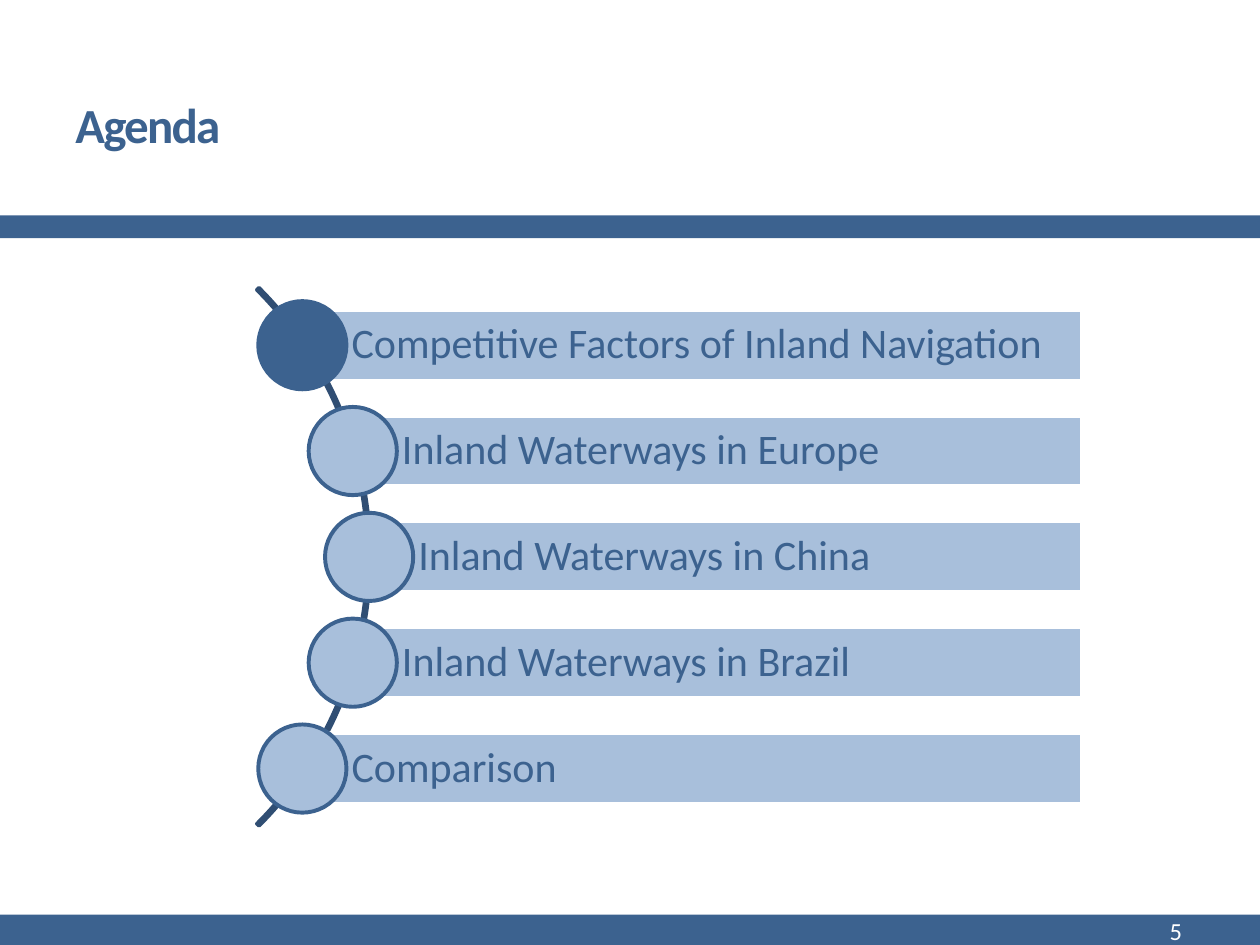
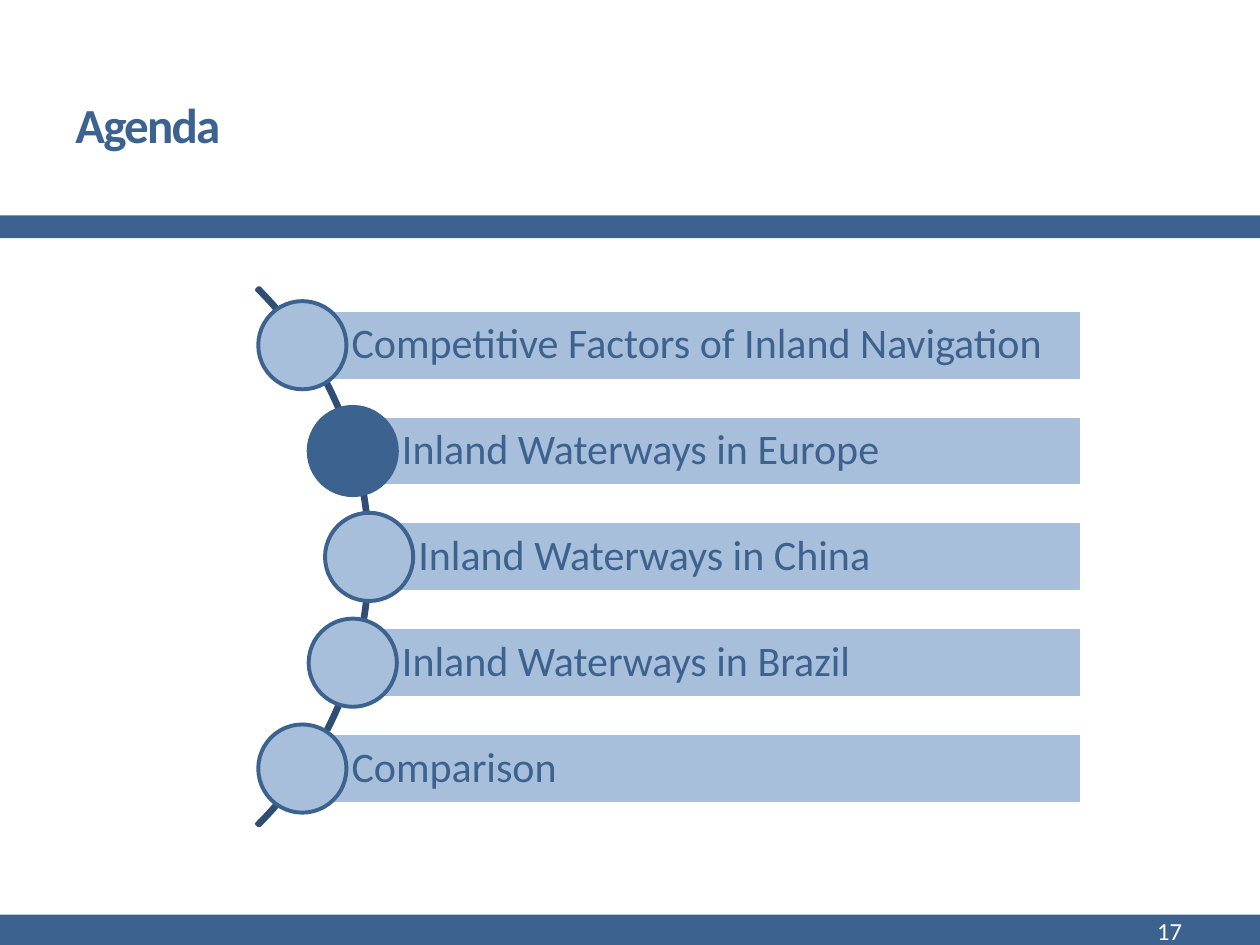
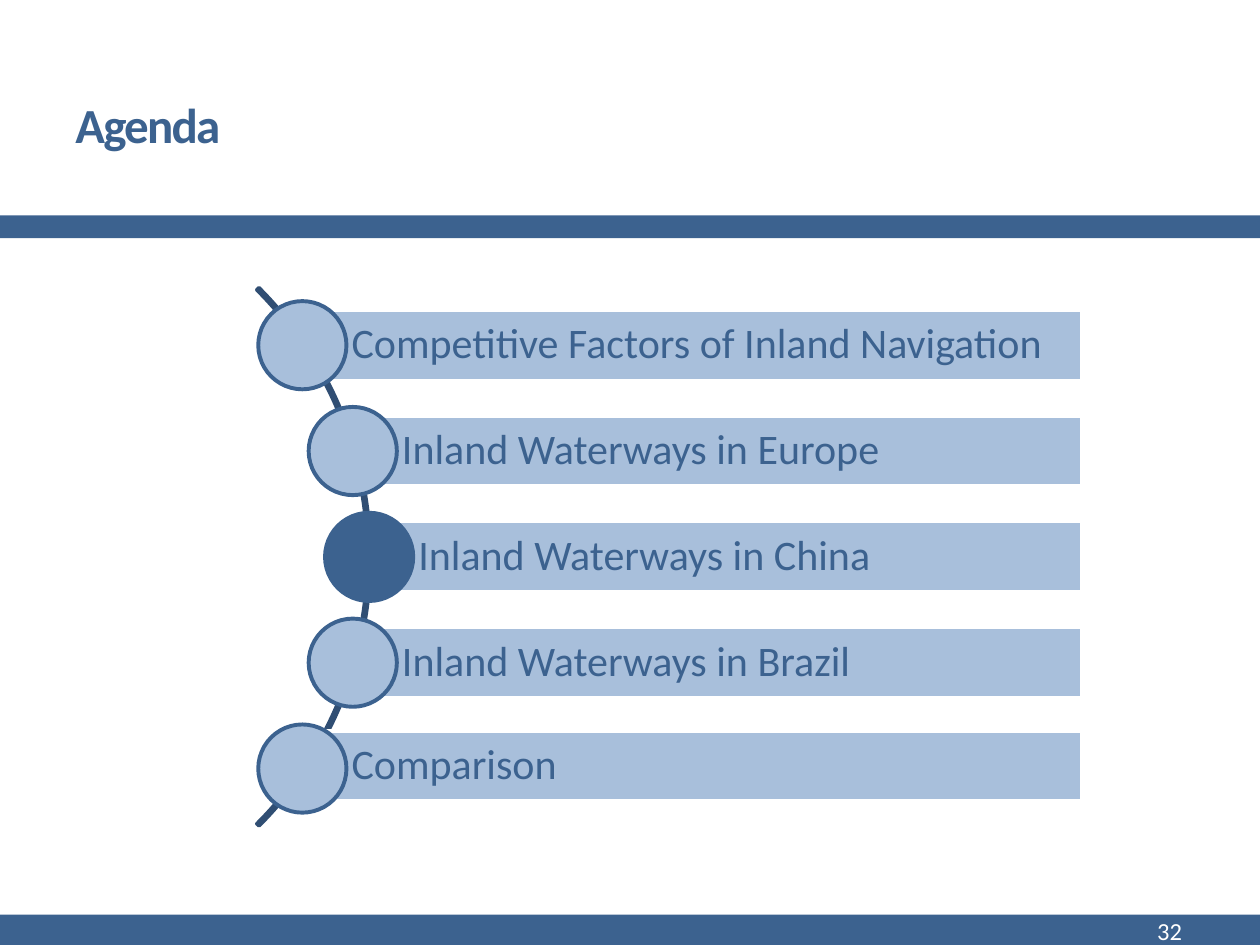
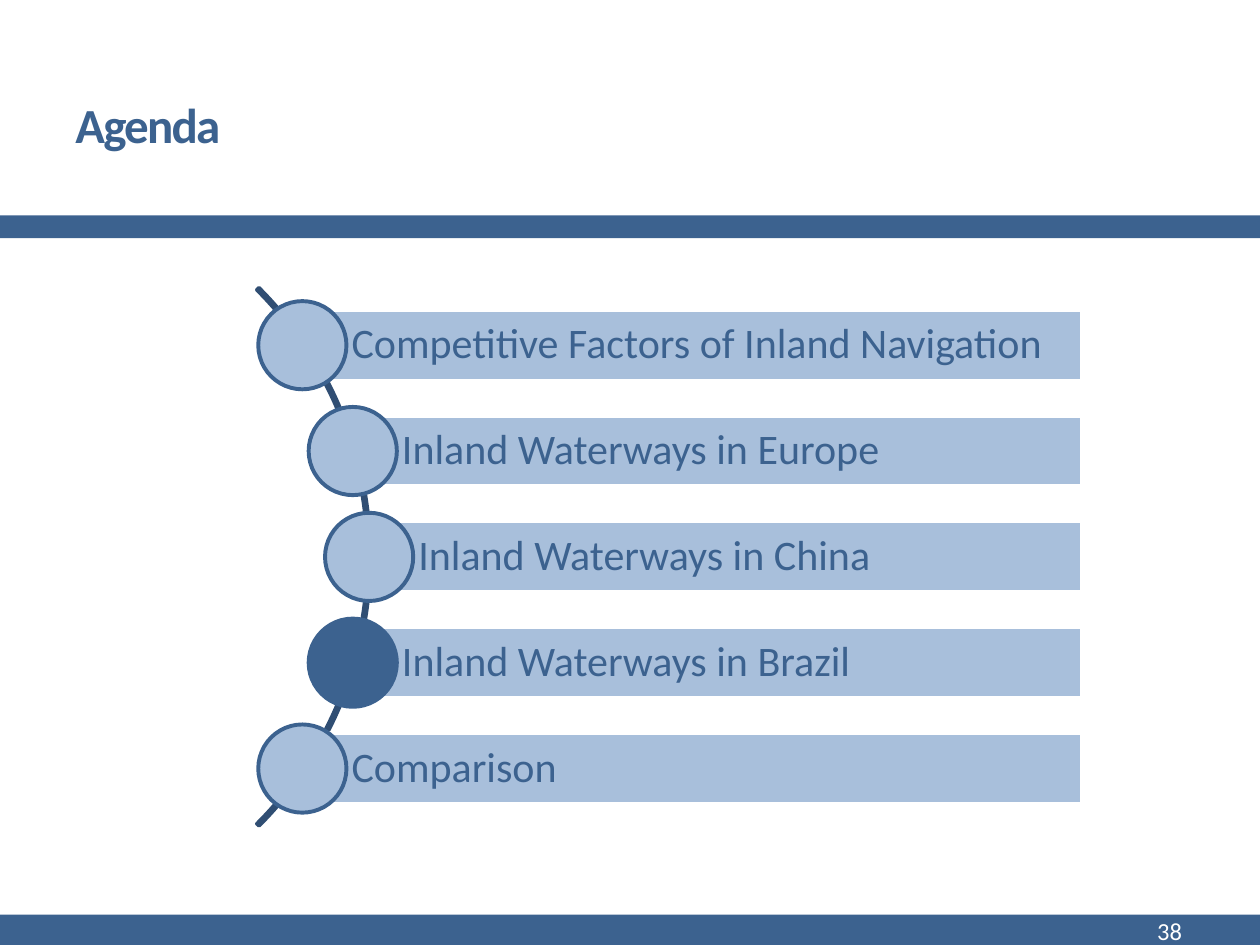
from pptx import Presentation
from pptx.dml.color import RGBColor
from pptx.enum.shapes import MSO_SHAPE
from pptx.enum.text import MSO_ANCHOR, PP_ALIGN
from pptx.util import Inches, Pt

RECTANGLE, OVAL, BLOCK_ARC = MSO_SHAPE.RECTANGLE, MSO_SHAPE.OVAL, MSO_SHAPE.BLOCK_ARC
MIDDLE = MSO_ANCHOR.MIDDLE
LEFT, RIGHT = PP_ALIGN.LEFT, PP_ALIGN.RIGHT

# Content: agenda items, each with the left edge of its dot
TITLE = "Agenda"
AGENDA = [
    ("Competitive Factors of Inland Navigation", 2.05),
    ("Inland Waterways in Europe", 2.45),
    ("Inland Waterways in China", 2.58),
    ("Inland Waterways in Brazil", 2.45),
    ("Comparison", 2.05),
]
# Page number, index of the current item, vertical shift of the last bar
SLIDES = [(5, 0, 0), (17, 1, 0), (32, 2, -0.02), (38, 3, 0)]

# Shared style
FONT = "Calibri"
BLUE = RGBColor(0x3C, 0x62, 0x8F)
DARK_BLUE = RGBColor(0x30, 0x4E, 0x73)
LIGHT_BLUE = RGBColor(0xA8, 0xBF, 0xDB)
WHITE = RGBColor(0xFF, 0xFF, 0xFF)
BANDS = [(-0.04, 7.26, 10.16, 0.5), (-0.02, 1.71, 10.12, 0.18)]
TITLE_BOX = (0.5, 0.44, 5.21, 1.08)
NUMBER_BOX = (8.31, 7.21, 1.17, 0.36)

# Agenda geometry
ARC_BOX = (-3.1, 1.4, 6.04, 6.04)
ARC_ADJUSTMENTS = (189, 27, 0.004)
FIRST_BAR_TOP, ROW_STEP = 2.46, 0.84
BAR_RIGHT, BAR_HEIGHT = 8.59, 0.56
DOT_SIZE = 0.7
BAR_INSET = 0.29  # from the dot's left edge to the bar's left edge
DOT_RISE = (DOT_SIZE - BAR_HEIGHT) / 2


def add_shape(slide, kind, box, fill=None, line=None, line_width=2.08):
    shape = slide.shapes.add_shape(kind, *map(Inches, box))
    shape.shadow.inherit = False
    if fill is None:
        shape.fill.background()
    else:
        shape.fill.solid()
        shape.fill.fore_color.rgb = fill
    if line is None:
        shape.line.fill.background()
    else:
        shape.line.color.rgb = line
        shape.line.width = Pt(line_width)
    return shape


def write(shape, text, size, color, align=LEFT, bold=False):
    frame = shape.text_frame
    frame.word_wrap = True
    frame.vertical_anchor = MIDDLE
    paragraph = frame.paragraphs[0]
    paragraph.alignment = align
    run = paragraph.add_run()
    run.text = text
    run.font.name = FONT
    run.font.size = Pt(size)
    run.font.bold = bold
    run.font.color.rgb = color
    return paragraph


def add_frame(slide, number):
    """Bands, title and page number."""
    for box in BANDS:
        add_shape(slide, RECTANGLE, box, BLUE)
    title = slide.shapes.add_textbox(*map(Inches, TITLE_BOX))
    paragraph = write(title, TITLE, 28, BLUE, bold=True)
    paragraph.runs[0].font._element.set("spc", "-100")  # tighter letters
    number_box = slide.shapes.add_textbox(*map(Inches, NUMBER_BOX))
    write(number_box, str(number), 14, WHITE, RIGHT)


def add_bar(slide, text, left, top):
    box = (left, top, BAR_RIGHT - left, BAR_HEIGHT)
    bar = add_shape(slide, RECTANGLE, box, LIGHT_BLUE, WHITE)
    frame = bar.text_frame
    frame.margin_left = Inches(0.45)
    frame.margin_top = frame.margin_right = frame.margin_bottom = Inches(0.07)
    write(bar, text, 24, BLUE).line_spacing = 0.9


def add_agenda(slide, current, last_shift):
    arc = add_shape(slide, BLOCK_ARC, ARC_BOX, line=DARK_BLUE)
    for index, value in enumerate(ARC_ADJUSTMENTS):
        arc.adjustments[index] = value
    for index, (text, dot_left) in enumerate(AGENDA):
        top = FIRST_BAR_TOP + index * ROW_STEP
        shift = last_shift if index == len(AGENDA) - 1 else 0
        add_bar(slide, text, dot_left + BAR_INSET, top + shift)
        dot_box = (dot_left, top - DOT_RISE, DOT_SIZE, DOT_SIZE)
        fill = BLUE if index == current else LIGHT_BLUE
        add_shape(slide, OVAL, dot_box, fill, BLUE, 2.25)


def main():
    presentation = Presentation()
    presentation.slide_width = Inches(10)
    presentation.slide_height = Inches(7.5)
    blank = presentation.slide_layouts[6]
    for number, current, last_shift in SLIDES:
        slide = presentation.slides.add_slide(blank)
        add_frame(slide, number)
        add_agenda(slide, current, last_shift)
    presentation.save("out.pptx")


if __name__ == "__main__":
    main()
